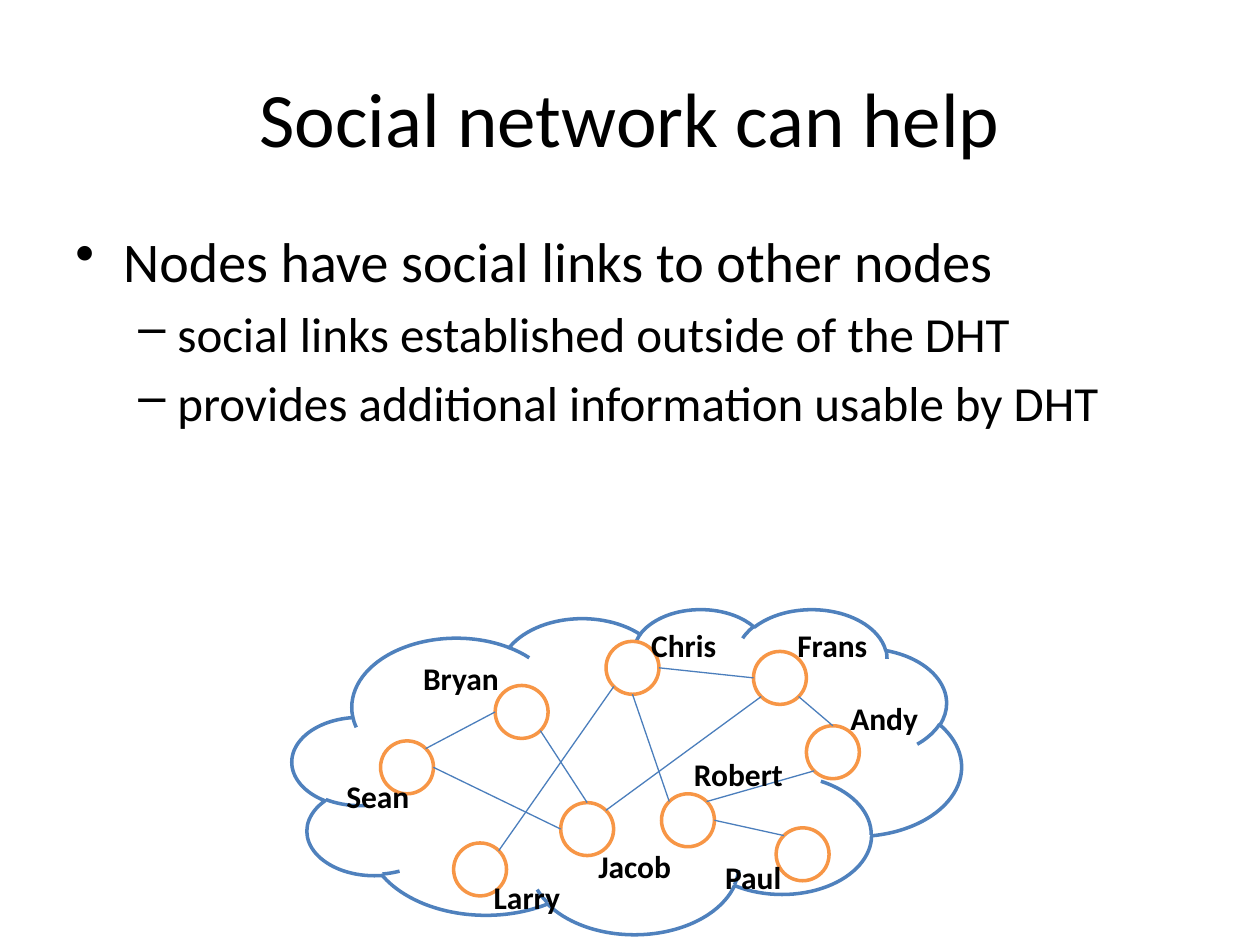
from dataclasses import dataclass
from math import cos, radians, sin

from lxml import etree
from pptx import Presentation
from pptx.dml.color import RGBColor
from pptx.enum.shapes import MSO_CONNECTOR, MSO_SHAPE
from pptx.enum.text import MSO_ANCHOR, PP_ALIGN
from pptx.oxml.ns import qn
from pptx.util import Inches, Pt

LEFT, CENTER, RIGHT = PP_ALIGN.LEFT, PP_ALIGN.CENTER, PP_ALIGN.RIGHT
TOP, MIDDLE = MSO_ANCHOR.TOP, MSO_ANCHOR.MIDDLE
CLOUD, OVAL = MSO_SHAPE.CLOUD, MSO_SHAPE.OVAL
STRAIGHT = MSO_CONNECTOR.STRAIGHT

COLUMNS, ROWS = 100, 75
DIAMETER = 4.2
LABEL_SIZE = (10.3, 4)
ANGLES = {"E": 0, "SE": 45, "S": 90, "SW": 135, "W": 180, "NW": 225, "N": 270, "NE": 315}


@dataclass(frozen=True)
class Theme:
    font: str = "Calibri"
    ink: str = "000000"
    paper: str = "FFFFFF"
    cloud: str = "4F81BD"
    node: str = "F79646"
    link: str = "4B7EBC"
    title: int = 44
    levels: tuple = (32, 28)
    label: int = 18
    outline: float = 2
    thin: float = 0.75
    bullets: tuple = ("•", "–")
    margins: tuple = (0.38, 0.81)
    hangs: tuple = (0.38, 0.31)


class Sheet:
    def __init__(self, deck, theme):
        self.theme = theme
        self.slide = deck.slides.add_slide(deck.slide_layouts[6])
        self.shapes = self.slide.shapes
        self.column = deck.slide_width / COLUMNS
        self.row = deck.slide_height / ROWS

    def place(self, across, down):
        return round(across * self.column), round(down * self.row)

    def group(self):
        self.shapes = self.slide.shapes.add_group_shape().shapes

    def frame(self, at, size, anchor=TOP):
        box = self.shapes.add_textbox(*self.place(*at), *self.place(*size))
        box.text_frame.word_wrap = True
        box.text_frame.vertical_anchor = anchor
        return box.text_frame

    def set_para(self, para, text, size, align=LEFT, bold=False):
        para.text = text
        para.alignment = align
        para.font.name = self.theme.font
        para.font.size = Pt(size)
        para.font.bold = bold
        para.font.color.rgb = RGBColor.from_string(self.theme.ink)

    def text(self, at, size, words, points, align=LEFT, bold=False, anchor=TOP):
        frame = self.frame(at, size, anchor)
        self.set_para(frame.paragraphs[0], words, points, align, bold)

    def bullets(self, at, size, items):
        frame = self.frame(at, size)
        for index, (level, words) in enumerate(items):
            para = frame.add_paragraph() if index else frame.paragraphs[0]
            points = self.theme.levels[level]
            self.set_para(para, words, points)
            para.level = level
            para.space_before = Pt(points * 0.2)
            properties = para._p.get_or_add_pPr()
            properties.set("marL", str(Inches(self.theme.margins[level])))
            properties.set("indent", str(-Inches(self.theme.hangs[level])))
            bullet = etree.Element(qn("a:buChar"), char=self.theme.bullets[level])
            properties.find(qn("a:spcBef")).addnext(bullet)

    def outline(self, kind, at, size, color):
        shape = self.shapes.add_shape(kind, *self.place(*at), *self.place(*size))
        shape.shadow.inherit = False
        shape.fill.solid()
        shape.fill.fore_color.rgb = RGBColor.from_string(self.theme.paper)
        shape.line.color.rgb = RGBColor.from_string(color)
        shape.line.width = Pt(self.theme.outline)

    def link(self, start, end):
        line = self.shapes.add_connector(STRAIGHT, *self.place(*start), *self.place(*end))
        line.line.color.rgb = RGBColor.from_string(self.theme.link)
        line.line.width = Pt(self.theme.thin)
        etree.SubElement(line._element.spPr, qn("a:effectLst"))


BODY = [
    (0, "Nodes have social links to other nodes"),
    (1, "social links established outside of the DHT"),
    (1, "provides additional information usable by DHT"),
]

NODES = {
    "Frans": (59.8, 51.7),
    "Robert": (52.5, 63),
    "Jacob": (44.5, 63.7),
    "Paul": (61.6, 65.7),
    "Chris": (48.1, 50.9),
    "Larry": (36, 66.9),
    "Bryan": (39.3, 54.4),
    "Sean": (30.2, 58.8),
    "Andy": (64, 57.6),
}

LINKS = [
    ("Chris", "SW", "Larry", "NE"),
    ("Chris", "E", "Frans", "W"),
    ("Chris", "S", "Robert", "NW"),
    ("Robert", "E", "Paul", "NW"),
    ("Frans", "SE", "Andy", "N"),
    ("Robert", "NE", "Andy", "SW"),
    ("Sean", "NE", "Bryan", "W"),
    ("Bryan", "SE", "Jacob", "N"),
    ("Jacob", "NE", "Frans", "SW"),
    ("Sean", "E", "Jacob", "W"),
]

LABELS = [
    ("Chris", (50.7, 49.2), LEFT),
    ("Frans", (62.3, 49.2), LEFT),
    ("Andy", (66.5, 55), LEFT),
    ("Robert", (54.1, 59.4), LEFT),
    ("Bryan", (32.6, 51.8), LEFT),
    ("Jacob", (46.5, 66.7), LEFT),
    ("Paul", (52.7, 67.6), RIGHT),
    ("Larry", (38.2, 69.2), LEFT),
    ("Sean", (26.5, 61.2), LEFT),
]


def rim(name, side):
    left, top = NODES[name]
    radius = DIAMETER / 2
    angle = radians(ANGLES[side])
    return left + radius * (1 + cos(angle)), top + radius * (1 + sin(angle))


def main():
    deck = Presentation()
    deck.slide_width, deck.slide_height = Inches(10), Inches(7.5)
    theme = Theme()
    sheet = Sheet(deck, theme)

    sheet.text((5, 3), (90, 12.5), "Social network can help", theme.title, CENTER, anchor=MIDDLE)
    sheet.bullets((5, 17.5), (90, 32.5), BODY)

    sheet.group()
    sheet.outline(CLOUD, (23.2, 48.3), (53.1, 25.8), theme.cloud)
    for corner in NODES.values():
        sheet.outline(OVAL, corner, (DIAMETER, DIAMETER), theme.node)
    for first, leaving, second, arriving in LINKS:
        sheet.link(rim(first, leaving), rim(second, arriving))

    sheet.group()
    for name, corner, align in LABELS:
        sheet.text(corner, LABEL_SIZE, name, theme.label, align, bold=True)

    deck.save("out.pptx")


if __name__ == "__main__":
    main()
